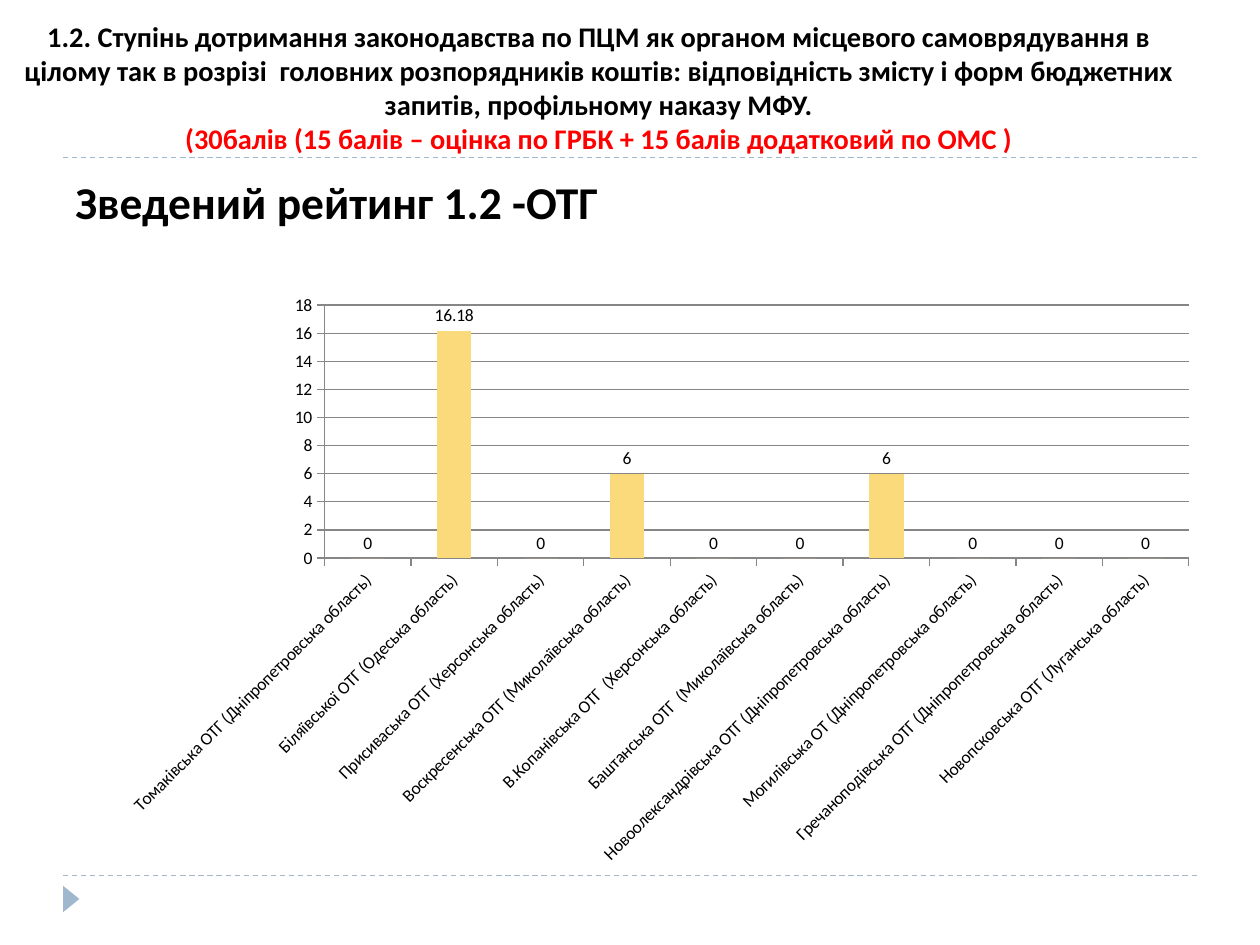
"""Build the slide with the summary 1.2 rating of the united communities."""
from dataclasses import dataclass

from lxml import etree
from pptx import Presentation
from pptx.chart.data import CategoryChartData
from pptx.dml.color import RGBColor
from pptx.enum import chart as charts, dml, shapes, text
from pptx.oxml.ns import qn
from pptx.util import Inches, Pt


@dataclass(frozen=True)
class Theme:
    """Colours, font and type sizes."""
    font: str = "Calibri"
    ink: RGBColor = RGBColor(0, 0, 0)
    alert: RGBColor = RGBColor(0xFF, 0, 0)
    accent: RGBColor = RGBColor(0x9F, 0xB8, 0xCD)
    bar: RGBColor = RGBColor(0xFB, 0xDA, 0x7B)
    axis: RGBColor = RGBColor(0x86, 0x86, 0x86)
    title_size: Pt = Pt(16.2)
    heading_size: Pt = Pt(26)
    chart_size: Pt = Pt(10)


@dataclass(frozen=True)
class Community:
    """A rated community and its score."""
    name: str
    score: float


THEME = Theme()
RULE_HEIGHTS = (1.25, 6.95)
TITLE = (
    "1.2. Ступінь дотримання законодавства по ПЦМ як органом місцевого "
    "самоврядування в цілому так в розрізі  головних розпорядників коштів: "
    "відповідність змісту і форм бюджетних запитів, профільному наказу МФУ."
)
POINTS = "(30балів (15 балів – оцінка по ГРБК + 15 балів додатковий по ОМС )"
HEADING = "Зведений рейтинг 1.2 -ОТГ"
COMMUNITIES = (
    Community("Томаківська ОТГ (Дніпропетровська область)", 0),
    Community("Біляївської ОТГ (Одеська область)", 16.18),
    Community("Присиваська ОТГ (Херсонська область)", 0),
    Community("Воскресенська ОТГ (Миколаївська область)", 6),
    Community("В.Копанівська ОТГ  (Херсонська область)", 0),
    Community("Баштанська ОТГ  (Миколаївська область)", 0),
    Community("Новоолександрівська ОТГ (Дніпропетровська область)", 6),
    Community("Могилівська ОТ (Дніпропетровська область)", 0),
    Community("Гречаноподівська ОТГ (Дніпропетровська область)", 0),
    Community("Новопсковська ОТГ (Луганська область)", 0),
)


def style_font(font, size: Pt, colour: RGBColor, bold: bool = False) -> None:
    """Apply the theme font with a size, colour and weight."""
    font.name, font.size, font.bold = THEME.font, size, bold
    font.color.rgb = colour


def add_rule(slide, height: float) -> None:
    """Draw a dashed rule across the slide."""
    rule = slide.shapes.add_connector(
        shapes.MSO_CONNECTOR.STRAIGHT,
        Inches(0.5), Inches(height), Inches(9.5), Inches(height))
    rule.line.color.rgb = THEME.accent
    rule.line.width = Pt(0.75)
    rule.line.dash_style = dml.MSO_LINE.DASH
    etree.SubElement(rule._element.spPr, qn("a:effectLst"))


def add_marker(slide) -> None:
    """Draw the footer triangle pointing right."""
    marker = slide.shapes.add_shape(
        shapes.MSO_SHAPE.ISOSCELES_TRIANGLE,
        Inches(0.46), Inches(7.07), Inches(0.21), Inches(0.13))
    marker.rotation = 90
    marker.shadow.inherit = False
    marker.fill.solid()
    marker.fill.fore_color.rgb = THEME.accent
    marker.line.fill.background()


def set_title(slide) -> None:
    """Fill the title with the criterion and its points in red."""
    title = slide.shapes.title
    title.left, title.top = Inches(0), Inches(0.3)
    title.width, title.height = Inches(9.5), Inches(1.25)
    frame = title.text_frame
    frame.text = f"{TITLE}\v{POINTS}"
    frame.auto_size = text.MSO_AUTO_SIZE.NONE
    frame.word_wrap = True
    frame.vertical_anchor = text.MSO_ANCHOR.BOTTOM
    frame.margin_bottom = Inches(0.32)
    criterion = frame.paragraphs[0]
    criterion.alignment = text.PP_ALIGN.CENTER
    for run, colour in zip(criterion.runs, (THEME.ink, THEME.alert)):
        style_font(run.font, THEME.title_size, colour, bold=True)


def add_heading(slide) -> None:
    """Write the heading above the chart."""
    frame = slide.shapes.add_textbox(
        Inches(0.5), Inches(1.33), Inches(9), Inches(5.4)).text_frame
    frame.word_wrap = True
    frame.text = HEADING
    heading = frame.paragraphs[0]
    heading.space_before = Pt(6)
    style_font(heading.runs[0].font, THEME.heading_size, THEME.ink, bold=True)


def add_rating(slide) -> None:
    """Chart the score of every community."""
    scores = CategoryChartData()
    scores.categories = [community.name for community in COMMUNITIES]
    scores.add_series("Series 1", [community.score for community in COMMUNITIES])
    rating = slide.shapes.add_chart(
        charts.XL_CHART_TYPE.COLUMN_CLUSTERED,
        Inches(0.86), Inches(2.25), Inches(8.75), Inches(4.7), scores).chart
    rating.has_legend = rating.has_title = False
    style_font(rating.font, THEME.chart_size, THEME.ink)

    bars = rating.plots[0]
    bars.vary_by_categories = False
    bars.gap_width = 150
    fill = bars.series[0].format.fill
    fill.solid()
    fill.fore_color.rgb = THEME.bar
    bars.has_data_labels = True
    bars.data_labels.show_value = True
    bars.data_labels.position = charts.XL_LABEL_POSITION.OUTSIDE_END

    points = rating.value_axis
    points.minimum_scale, points.maximum_scale, points.major_unit = 0, 18, 2
    points.has_major_gridlines = True
    points.major_gridlines.format.line.color.rgb = THEME.axis
    for axis in (rating.category_axis, points):
        axis.major_tick_mark = charts.XL_TICK_MARK.OUTSIDE
        axis.format.line.color.rgb = THEME.axis
        style_font(axis.tick_labels.font, THEME.chart_size, THEME.ink)
    names = rating.category_axis._element.find(qn("c:txPr"))
    names.find(qn("a:bodyPr")).set("rot", str(-45 * 60000))


def main() -> None:
    """Assemble and save the slide."""
    deck = Presentation()
    deck.slide_width, deck.slide_height = Inches(10), Inches(7.5)
    slide = deck.slides.add_slide(deck.slide_layouts.get_by_name("Title Only"))
    for height in RULE_HEIGHTS:
        add_rule(slide, height)
    add_marker(slide)
    set_title(slide)
    add_heading(slide)
    add_rating(slide)
    deck.save("out.pptx")


if __name__ == "__main__":
    main()
